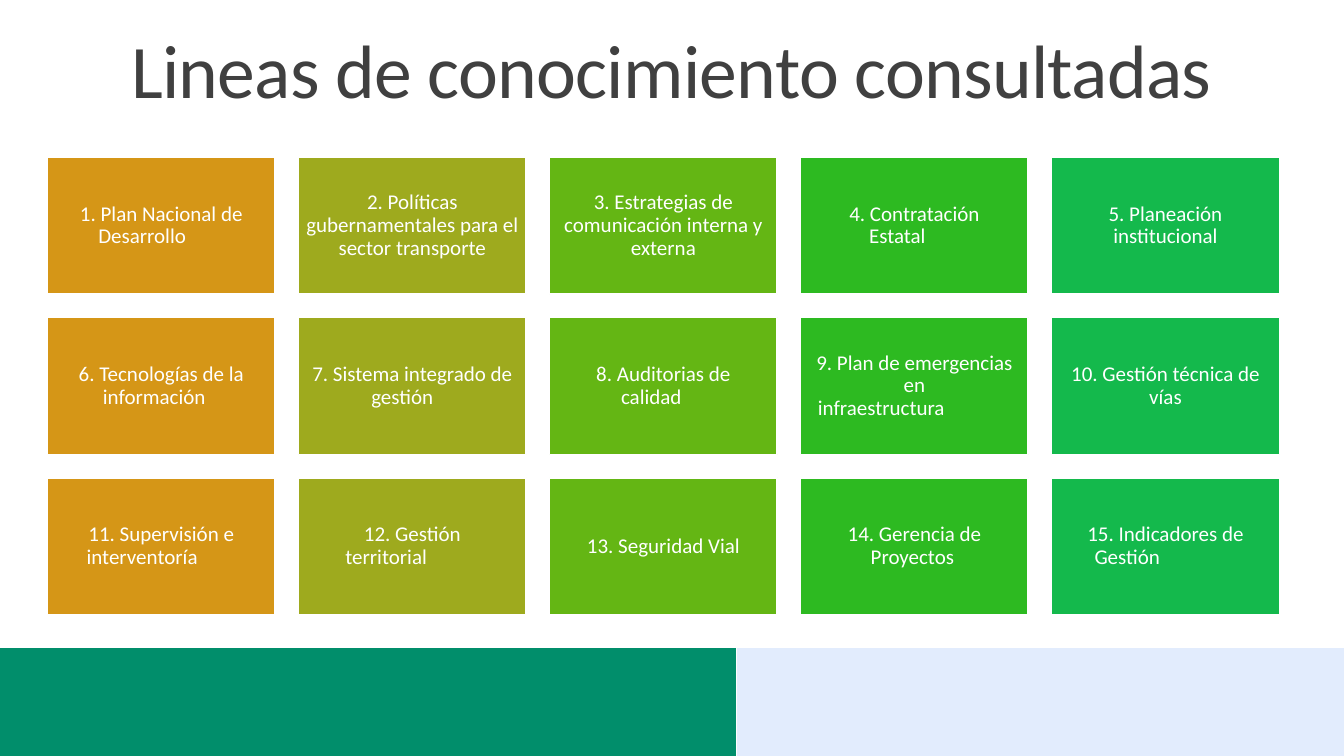
"""Build the slide of the fifteen knowledge lines consulted."""
import dataclasses
import typing

import pptx
import pptx.dml.color
import pptx.enum.shapes
import pptx.enum.text
import pptx.util

Inches = pptx.util.Inches
Pt = pptx.util.Pt
ALIGN = pptx.enum.text.PP_ALIGN
ANCHOR = pptx.enum.text.MSO_ANCHOR
RECT = pptx.enum.shapes.MSO_SHAPE.RECTANGLE

COLORS = {
    "band": "018E6B", "pale": "E2ECFD", "title": "404040", "white": "FFFFFF",
    "col0": "D59617", "col1": "9EAA1E", "col2": "64B614",
    "col3": "2DBA21", "col4": "14B94C",
}
COLS = 5
LEFT, TOP = 0.47, 1.56
WIDTH, HEIGHT = 2.26, 1.36
STEP_X, STEP_Y = 2.49, 1.59
PAD = Inches(0.06)


@dataclasses.dataclass
class Box:
    """Place of an item in inches."""
    left: float
    top: float
    width: float
    height: float

    def emu(self) -> list[int]:
        """Return the four lengths for a shape."""
        return [Inches(n) for n in (self.left, self.top, self.width, self.height)]


@dataclasses.dataclass
class Card:
    """Label of a card and how far its last line sits left of centre."""
    text: str
    shift: float = 0


BANDS = {"band": Box(-0.02, 6.43, 7.32, 1.07), "pale": Box(7.31, 6.43, 6.02, 1.07)}
CARDS = [
    Card("1. Plan Nacional de Desarrollo", 0.19),
    Card("2. Políticas gubernamentales para el sector transporte"),
    Card("3. Estrategias de comunicación interna y externa"),
    Card("4. Contratación\vEstatal", 0.17),
    Card("5. Planeación institucional"),
    Card("6. Tecnologías de la información", 0.07),
    Card("7. Sistema integrado de gestión", 0.1),
    Card("8. Auditorias de\vcalidad", 0.12),
    Card("9. Plan de emergencias en\ninfraestructura", 0.33),
    Card("10. Gestión técnica de vías"),
    Card("11. Supervisión e interventoría", 0.19),
    Card("12. Gestión\vterritorial", 0.26),
    Card("13. Seguridad Vial"),
    Card("14. Gerencia de Proyectos", 0.02),
    Card("15. Indicadores de Gestión", 0.38),
]
FRAME = {
    "word_wrap": True, "vertical_anchor": ANCHOR.MIDDLE,
    "margin_left": PAD, "margin_right": PAD,
    "margin_top": PAD, "margin_bottom": PAD,
}
HEAD = {
    "word_wrap": True, "vertical_anchor": ANCHOR.BOTTOM,
    "auto_size": pptx.enum.text.MSO_AUTO_SIZE.NONE,
}
PARA = {
    "alignment": ALIGN.CENTER, "line_spacing": 0.9,
    "space_before": Pt(0), "space_after": Pt(0),
}


def apply(item: typing.Any, form: dict[str, typing.Any]) -> None:
    """Set each format value on the item."""
    for name, value in form.items():
        setattr(item, name, value)


def color(key: str) -> pptx.dml.color.RGBColor:
    """Return a named colour."""
    return pptx.dml.color.RGBColor.from_string(COLORS[key])


def style(font: typing.Any, size: int, key: str) -> None:
    """Set the face, size and colour of a font."""
    apply(font, {"name": "Calibri", "size": Pt(size), "bold": False})
    font.color.rgb = color(key)


def add_rect(slide: typing.Any, box: Box, key: str) -> typing.Any:
    """Add a filled rectangle with no outline."""
    rect = slide.shapes.add_shape(RECT, *box.emu())
    rect.shadow.inherit = False
    rect.fill.solid()
    rect.fill.fore_color.rgb = color(key)
    rect.line.fill.background()
    return rect


def add_title(slide: typing.Any) -> None:
    """Fill and place the title."""
    title = slide.shapes.title
    left, top, width, height = Box(1.2, -0.42, 11, 1.59).emu()
    apply(title, {"left": left, "top": top, "width": width, "height": height})
    apply(title.text_frame, HEAD)
    para = title.text_frame.paragraphs[0]
    apply(para, {"alignment": ALIGN.LEFT, "line_spacing": 0.8})
    run = para.add_run()
    run.text = "Lineas de conocimiento consultadas"
    style(run.font, 54, "title")
    run.font._element.set("spc", "-50")


def add_card(slide: typing.Any, card: Card, row: int, col: int) -> None:
    """Add a card and its label, whose first line stays centred."""
    box = Box(LEFT + col * STEP_X, TOP + row * STEP_Y, WIDTH, HEIGHT)
    rect = add_rect(slide, box, f"col{col}")
    rect.line.color.rgb = color("white")
    rect.line.width = Pt(1.25)

    room = 2 * card.shift
    area = Box(box.left - room, box.top, box.width + room, box.height)
    frame = slide.shapes.add_textbox(*area.emu()).text_frame
    apply(frame, FRAME)
    frame.text = card.text
    paras = frame.paragraphs
    for para in paras:
        apply(para, PARA)
        props = para._p.get_or_add_pPr()
        if para is not paras[-1]:
            props.set("marL", str(Inches(room)))
        elif len(paras) == 1:
            props.set("indent", str(Inches(room)))
        for run in para.runs:
            style(run.font, 15, "white")


def main() -> None:
    """Build and save the deck."""
    deck = pptx.Presentation()
    apply(deck, {"slide_width": Inches(13.33), "slide_height": Inches(7.5)})
    slide = deck.slides.add_slide(deck.slide_layouts[5])
    for key, box in BANDS.items():
        add_rect(slide, box, key)
    add_title(slide)
    for place, card in enumerate(CARDS):
        add_card(slide, card, *divmod(place, COLS))
    deck.save("out.pptx")


if __name__ == "__main__":
    main()
